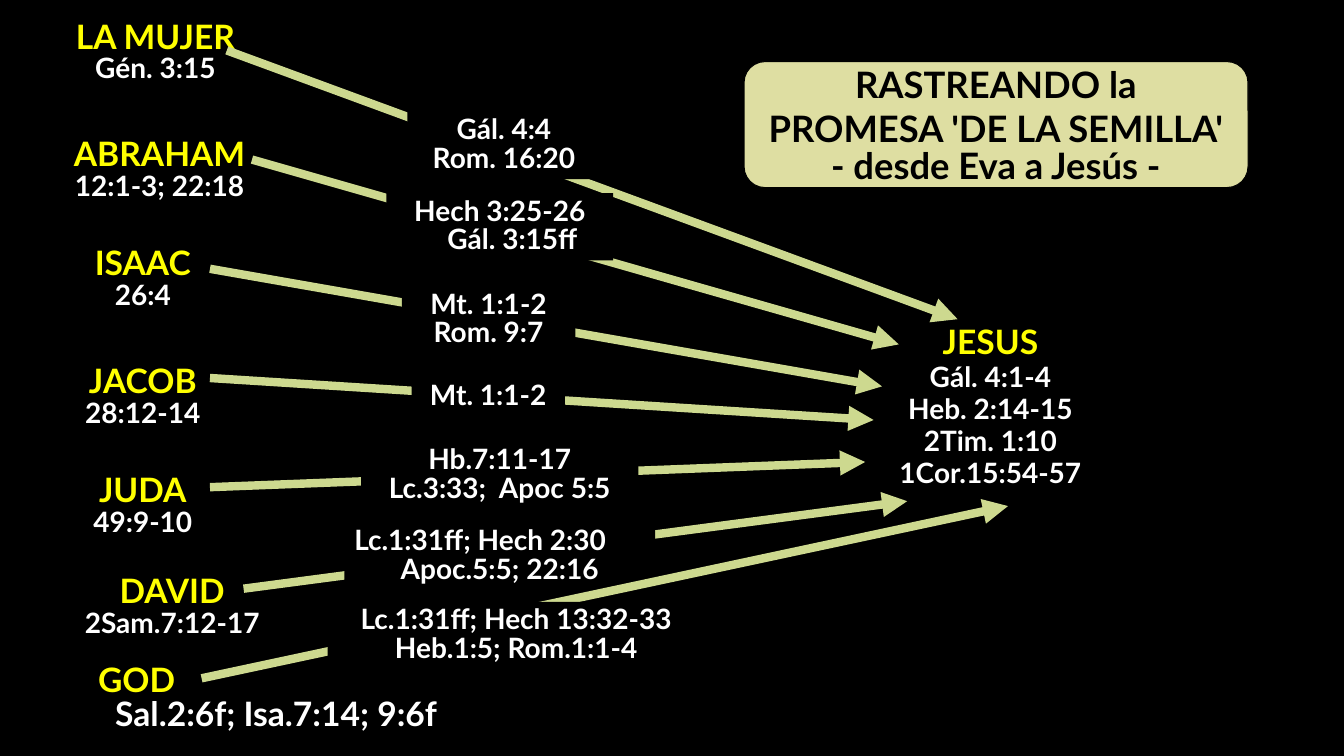
from pptx import Presentation
from pptx.dml.color import RGBColor
from pptx.enum import shapes, text
from pptx.oxml.ns import qn
from pptx.util import Pt
from lxml import etree

BLACK = RGBColor(0x00, 0x00, 0x00)
WHITE = RGBColor(0xFF, 0xFF, 0xFF)
YELLOW = RGBColor(0xFF, 0xFF, 0x00)
ARROW_GREEN = RGBColor(0xCD, 0xD9, 0x8F)
TITLE_CREAM = RGBColor(0xDE, 0xDE, 0xA2)

CENTER, LEFT = text.PP_ALIGN.CENTER, text.PP_ALIGN.LEFT
NAME = {"size": Pt(24), "color": YELLOW}
VERSE = {"size": Pt(20), "color": WHITE}
LARGE_VERSE = {"size": Pt(24), "color": WHITE}
HEADING = {"size": Pt(26), "color": BLACK}
TIGHT = 0.85

# Each ancestor: (name, verse), name frame, arrow ends, fulfilment verses, verse frame
ANCESTORS = [
    (("LA MUJER", "Gén. 3:15"), (42, 12, 138, 53), (162, 36, 684, 228),
     ("Gál. 4:4", "Rom. 16:20"), (291, 80, 138, 48)),
    (("ABRAHAM", "12:1-3; 22:18"), (42, 96, 144, 73), (180, 114, 642, 246),
     ("Hech 3:25-26", "Gál. 3:15ff"), (276, 138, 162, 48)),
    (("ISAAC", "26:4"), (42, 174, 120, 53), (150, 192, 630, 276),
     ("Mt. 1:1-2", "Rom. 9:7"), (287, 204.5, 124, 48)),
    (("JACOB", "28:12-14"), (42, 258, 120, 53), (150, 270, 624, 300),
     ("Mt. 1:1-2",), (294, 270, 109.5, 28)),
    (("JUDA", "49:9-10"), (42, 336, 120, 53), (150, 348, 618, 330),
     ("Hb.7:11-17", "Lc.3:33;  Apoc 5:5"), (258, 315.5, 198, 48)),
    (("DAVID", "2Sam.7:12-17"), (42, 408, 162, 53), (174, 420.5, 648, 358),
     ("Lc.1:31ff; Hech 2:30", "Apoc.5:5; 22:16"), (246, 373.5, 222, 48)),
    (("GOD", "Sal.2:6f; Isa.7:14; 9:6f"), (46, 471.5, 302.5, 57), (144, 484.5, 720, 361.5),
     ("Lc.1:31ff; Hech 13:32-33", "Heb.1:5; Rom.1:1-4"), (234, 430, 269.5, 48)),
]

# Lines that depart from plain centring: alignment and left indent
LINE_LAYOUT = {
    "GOD": (LEFT, 17),
    "Lc.1:31ff; Hech 2:30": (LEFT, 0),
    "Gál. 3:15ff": (CENTER, 18),
}


def points(values):
    return [Pt(value) for value in values]


def write_lines(frame, lines, spacings):
    """Fill a text frame with (wording, format) lines."""
    for index, ((wording, style), spacing) in enumerate(zip(lines, spacings)):
        line = frame.paragraphs[0] if index == 0 else frame.add_paragraph()
        line.alignment, indent = LINE_LAYOUT.get(wording, (CENTER, 0))
        line.line_spacing = spacing
        if indent:
            line._p.get_or_add_pPr().set("marL", str(Pt(indent)))
        run = line.add_run()
        run.text = wording
        font_values = {"name": "Lato", "bold": True, "size": style["size"]}
        for attribute, value in font_values.items():
            setattr(run.font, attribute, value)
        run.font.color.rgb = style["color"]


def set_frame(frame, **values):
    for attribute, value in values.items():
        setattr(frame, attribute, value)


def add_label(slide, place, lines, spacing=TIGHT):
    label = slide.shapes.add_textbox(*points(place))
    set_frame(label.text_frame, word_wrap=True,
              auto_size=text.MSO_AUTO_SIZE.SHAPE_TO_FIT_TEXT)
    write_lines(label.text_frame, lines, [spacing] * len(lines))


def add_panel(slide, kind, place, fill):
    panel = slide.shapes.add_shape(kind, *points(place))
    panel.shadow.inherit = False
    panel.fill.solid()
    panel.fill.fore_color.rgb = fill
    panel.line.fill.background()
    return panel


def add_verses(slide, place, verses):
    """Black panel that interrupts the arrow behind the verses."""
    panel = add_panel(slide, shapes.MSO_SHAPE.RECTANGLE, place, BLACK)
    set_frame(panel.text_frame, word_wrap=True, vertical_anchor=text.MSO_ANCHOR.TOP,
              auto_size=text.MSO_AUTO_SIZE.SHAPE_TO_FIT_TEXT)
    write_lines(panel.text_frame, [(verse, VERSE) for verse in verses],
                [TIGHT] * len(verses))


def add_arrow(slide, ends):
    arrow = slide.shapes.add_connector(shapes.MSO_CONNECTOR.STRAIGHT, *points(ends))
    arrow.line.width = Pt(6)
    arrow.line.color.rgb = ARROW_GREEN
    etree.SubElement(arrow.line._get_or_add_ln(), qn("a:tailEnd"), type="triangle")
    etree.SubElement(arrow._element.spPr, qn("a:effectLst"))


def add_title(slide):
    title = add_panel(slide, shapes.MSO_SHAPE.ROUNDED_RECTANGLE,
                      (531.5, 44, 360, 90), TITLE_CREAM)
    title.line.color.rgb = BLACK
    title.line.width = Pt(0.75)
    set_frame(title.text_frame, word_wrap=False, vertical_anchor=text.MSO_ANCHOR.MIDDLE)
    wording = ("RASTREANDO la", "PROMESA 'DE LA SEMILLA'", "- desde Eva a Jesús -")
    write_lines(title.text_frame, [(line, HEADING) for line in wording], [None, None, TIGHT])


def main():
    deck = Presentation()
    deck.slide_width, deck.slide_height = Pt(960), Pt(540)
    slide = deck.slides.add_slide(deck.slide_layouts[6])
    slide.background.fill.solid()
    slide.background.fill.fore_color.rgb = BLACK

    # Ancestors, each with its arrow and the verses over it
    for (name, verse), name_place, arrow_ends, verses, verse_place in ANCESTORS:
        verse_style = LARGE_VERSE if name == "GOD" else VERSE
        add_label(slide, name_place, [(name, NAME), (verse, verse_style)])
        add_arrow(slide, arrow_ends)
        add_verses(slide, verse_place, verses)

    # Where all arrows lead
    jesus_verses = ("Gál. 4:1-4", "Heb. 2:14-15", "2Tim. 1:10", "1Cor.15:54-57")
    add_label(slide, (624, 228, 167, 127),
              [("JESUS", NAME)] + [(verse, VERSE) for verse in jesus_verses], 0.95)

    add_title(slide)
    deck.save("out.pptx")


if __name__ == "__main__":
    main()
